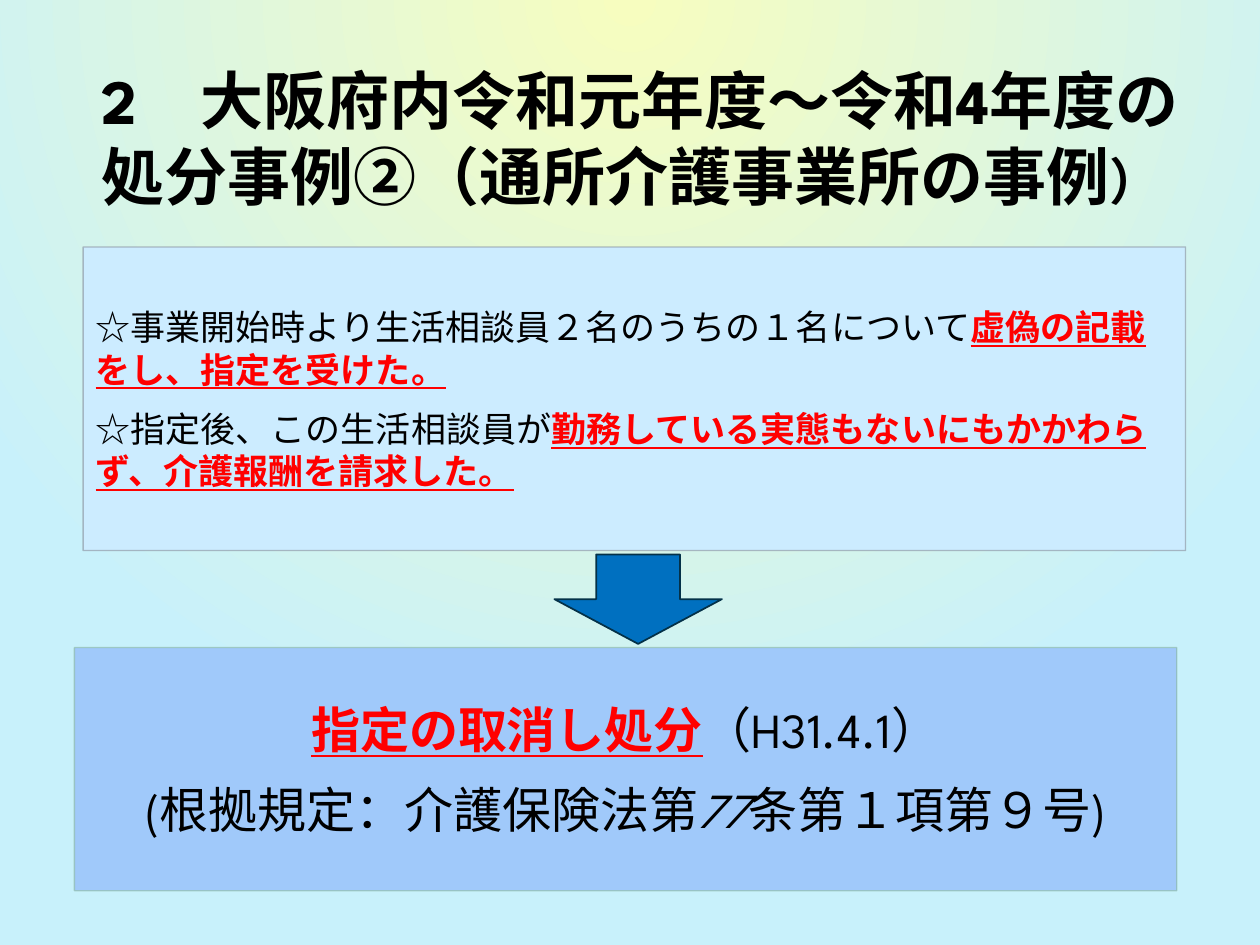
from dataclasses import dataclass

from lxml import etree
from pptx import Presentation, util as u
from pptx.dml.color import RGBColor
from pptx.enum import shapes, text
from pptx.oxml import ns


@dataclass(frozen=True)
class Theme:
    """Colours, font and type sizes of the deck."""
    font: str = "League Spartan"
    ink: str = "000000"
    alert: str = "FF0000"
    glow: str = "F7FDBF"
    sky: str = "C8F1FB"
    facts: str = "CCECFF"
    facts_edge: str = "89919C"
    ruling: str = "A0C9FA"
    ruling_edge: str = "8AB7A1"
    arrow: str = "0070C0"
    arrow_edge: str = "043148"
    title: float = 36
    bracket: float = 28.8
    body: float = 20
    result: float = 28


THEME = Theme()
WIDTH, HEIGHT = u.Inches(10), u.Inches(7.5)


def place(left, top, width, height):
    """Turn percentages of the slide's size into lengths."""
    return [int(share * side / 100) for share, side in
            zip((left, top, width, height), (WIDTH, HEIGHT) * 2)]


def add_span(para, words, size, color=THEME.ink, bold=False, underline=False, italic=False):
    """Add a formatted span of text to a paragraph."""
    span = para.add_run()
    span.text = words
    font = span.font
    font.name, font.size = THEME.font, u.Pt(size)
    font.bold, font.underline, font.italic = bold, underline, italic
    font.color.rgb = RGBColor.from_string(color)


def write(box, paragraphs, align=text.PP_ALIGN.LEFT, before=0, after=0):
    """Fill a box with paragraphs, each a list of (words, format) spans."""
    frame = box.text_frame
    frame.word_wrap = True
    frame.vertical_anchor = text.MSO_ANCHOR.MIDDLE
    for index, spans in enumerate(paragraphs):
        para = frame.add_paragraph() if index else frame.paragraphs[0]
        para.alignment = align
        para.space_before, para.space_after = u.Pt(before), u.Pt(after)
        for words, style in spans:
            add_span(para, words, **style)


def add_block(page, kind, area, fill, edge, weight, opacity=100):
    """Add a filled shape with an outline of the given opacity."""
    block = page.shapes.add_shape(kind, *place(*area))
    block.shadow.inherit = False
    block.fill.solid()
    block.fill.fore_color.rgb = RGBColor.from_string(fill)
    block.line.color.rgb = RGBColor.from_string(edge)
    block.line.width = u.Pt(weight)
    if opacity < 100:
        color = block.line._ln.find(".//" + ns.qn("a:srgbClr"))
        etree.SubElement(color, ns.qn("a:alpha"), val=str(opacity * 1000))
    return block


def paint_background(page):
    """Paint a radial glow spreading from the top centre."""
    fill = page.background.fill
    fill.gradient()
    for stop, color in zip(fill.gradient_stops, (THEME.glow, THEME.sky)):
        stop.color.rgb = RGBColor.from_string(color)
    gradient = page.background._cSld.find(".//" + ns.qn("a:gradFill"))
    linear = gradient.find(ns.qn("a:lin"))
    circle = etree.Element(ns.qn("a:path"), path="circle")
    etree.SubElement(circle, ns.qn("a:fillToRect"), b="100000")
    gradient.replace(linear, circle)


def main():
    """Build the slide and save it."""
    deck = Presentation()
    deck.slide_width, deck.slide_height = WIDTH, HEIGHT
    page = deck.slides.add_slide(deck.slide_layouts[6])
    paint_background(page)

    heading = dict(size=THEME.title, bold=True)
    plain = dict(size=THEME.body)
    stress = dict(color=THEME.alert, bold=True, underline=True)
    result = dict(size=THEME.result)

    title = page.shapes.add_textbox(*place(7.1, 6.4, 87.5, 16.27))
    write(title, [[("2　大阪府内令和元年度～令和4年度の処分事例②（通所介護事業所の事例", heading),
                   ("）", dict(size=THEME.bracket, bold=True))]])

    box = shapes.MSO_SHAPE.RECTANGLE
    facts = add_block(page, box, (6.6, 26.13, 87.5, 32.13),
                      THEME.facts, THEME.facts_edge, 0.75, 60)
    write(facts, [
        [("☆事業開始時より生活相談員２名のうちの１名について", plain),
         ("虚偽の記載をし、指定を受けた。", plain | stress)],
        [("☆指定後、この生活相談員が", plain),
         ("勤務している実態もないにもかかわらず、介護報酬を請求した。", plain | stress)],
    ], before=4, after=6)

    ruling = add_block(page, box, (5.9, 68.53, 87.5, 25.73),
                       THEME.ruling, THEME.ruling_edge, 0.75, 60)
    write(ruling, [
        [("指定の取消し処分", result | stress), ("（H31.4.1）", result)],
        [("(根拠規定：介護保険法第", result), ("77", result | dict(italic=True)),
         ("条第１項第９号)", result)],
    ], align=text.PP_ALIGN.CENTER, before=6, after=6)

    add_block(page, shapes.MSO_SHAPE.DOWN_ARROW, (44, 58.67, 13.3, 9.47),
              THEME.arrow, THEME.arrow_edge, 1)
    deck.save("out.pptx")


if __name__ == "__main__":
    main()
